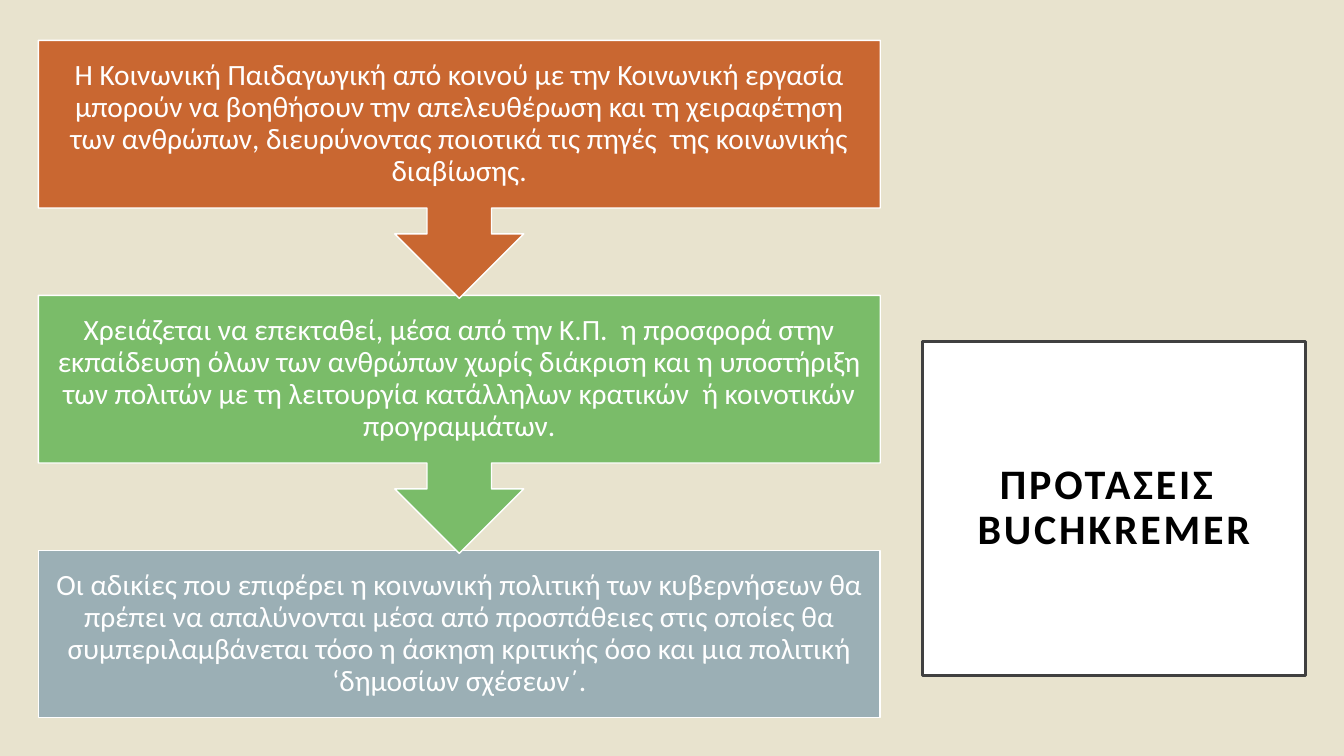
"""Build the slide of three linked proposals beside a framed title."""
from dataclasses import dataclass

import pptx
import pptx.dml.color
import pptx.enum.shapes
import pptx.enum.text
import pptx.util

Inches = pptx.util.Inches
Pt = pptx.util.Pt
RGBColor = pptx.dml.color.RGBColor
SHAPE = pptx.enum.shapes.MSO_SHAPE

BACKGROUND = RGBColor(0xE8, 0xE3, 0xCE)
WHITE = RGBColor(0xFF, 0xFF, 0xFF)
BLACK = RGBColor(0, 0, 0)
FRAME = RGBColor(0x40, 0x40, 0x40)
ORANGE = RGBColor(0xC9, 0x67, 0x31)
GREEN = RGBColor(0x7A, 0xBC, 0x69)
GREY = RGBColor(0x9B, 0xAF, 0xB5)

LEFT, TOP, WIDTH = 0.38, 0.4, 8.35
BODY_HEIGHT, CALLOUT_HEIGHT, PITCH = 1.66, 2.56, 2.53

BODY_FONT = {"name": "Calibri", "size": Pt(21), "bold": False}
TITLE_FONT = {"name": "Calibri", "size": Pt(30), "bold": True}


@dataclass
class Step:
    text: str
    fill: RGBColor


STEPS = [
    Step("Η Κοινωνική Παιδαγωγική από κοινού με την Κοινωνική εργασία μπορούν να "
         "βοηθήσουν την απελευθέρωση και τη χειραφέτηση των ανθρώπων, διευρύνοντας "
         "ποιοτικά τις πηγές  της κοινωνικής διαβίωσης.", ORANGE),
    Step("Χρειάζεται να επεκταθεί, μέσα από την Κ.Π.  η προσφορά στην εκπαίδευση όλων "
         "των ανθρώπων χωρίς διάκριση και η υποστήριξη των πολιτών με τη λειτουργία "
         "κατάλληλων κρατικών  ή κοινοτικών προγραμμάτων.", GREEN),
    Step("Οι αδικίες που επιφέρει η κοινωνική πολιτική των κυβερνήσεων θα πρέπει να "
         "απαλύνονται μέσα από προσπάθειες στις οποίες θα συμπεριλαμβάνεται τόσο η "
         "άσκηση κριτικής όσο και μια πολιτική ‘δημοσίων σχέσεων΄.", GREY),
]


def add_box(s, kind, box: tuple, fill: RGBColor, line: RGBColor, weight: float):
    sp = s.shapes.add_shape(kind, *map(Inches, box))
    sp.shadow.inherit = False
    sp.fill.solid()
    sp.fill.fore_color.rgb = fill
    sp.line.color.rgb = line
    sp.line.width = Pt(weight)
    return sp


def write_text(sp, text: str, font: dict, color: RGBColor, inset: float):
    tf = sp.text_frame
    tf.word_wrap = True
    tf.vertical_anchor = pptx.enum.text.MSO_ANCHOR.MIDDLE
    for side in ("left", "top", "right", "bottom"):
        setattr(tf, f"margin_{side}", Inches(inset))
    p = tf.paragraphs[0]
    p.alignment = pptx.enum.text.PP_ALIGN.CENTER
    p.line_spacing = 0.9
    r = p.add_run()
    r.text = text
    for name, value in font.items():
        setattr(r.font, name, value)
    r.font.color.rgb = color
    return r


def add_step(s, index: int, step: Step) -> None:
    top = TOP + index * PITCH
    body = (LEFT, top, WIDTH, BODY_HEIGHT)
    if index == len(STEPS) - 1:
        add_box(s, SHAPE.RECTANGLE, body, step.fill, WHITE, 1)
    else:
        callout = (LEFT, top, WIDTH, CALLOUT_HEIGHT)
        sp = add_box(s, SHAPE.UP_ARROW_CALLOUT, callout, step.fill, WHITE, 1)
        sp.rotation = 180
    label = s.shapes.add_textbox(*map(Inches, body))
    write_text(label, step.text, BODY_FONT, WHITE, 0.16)


def main() -> None:
    prs = pptx.Presentation()
    prs.slide_width, prs.slide_height = Inches(13.33), Inches(7.5)
    s = prs.slides.add_slide(prs.slide_layouts[6])
    s.background.fill.solid()
    s.background.fill.fore_color.rgb = BACKGROUND

    title = add_box(s, SHAPE.RECTANGLE, (9.15, 3.39, 3.8, 3.31), WHITE, FRAME, 2.5)
    r = write_text(title, "ΠΡΟΤΑΣΕΙΣ  BUCHKREMER", TITLE_FONT, BLACK, 0.2)
    r.font._element.set("spc", "200")

    for index, step in reversed(list(enumerate(STEPS))):
        add_step(s, index, step)
    prs.save("out.pptx")


if __name__ == "__main__":
    main()
